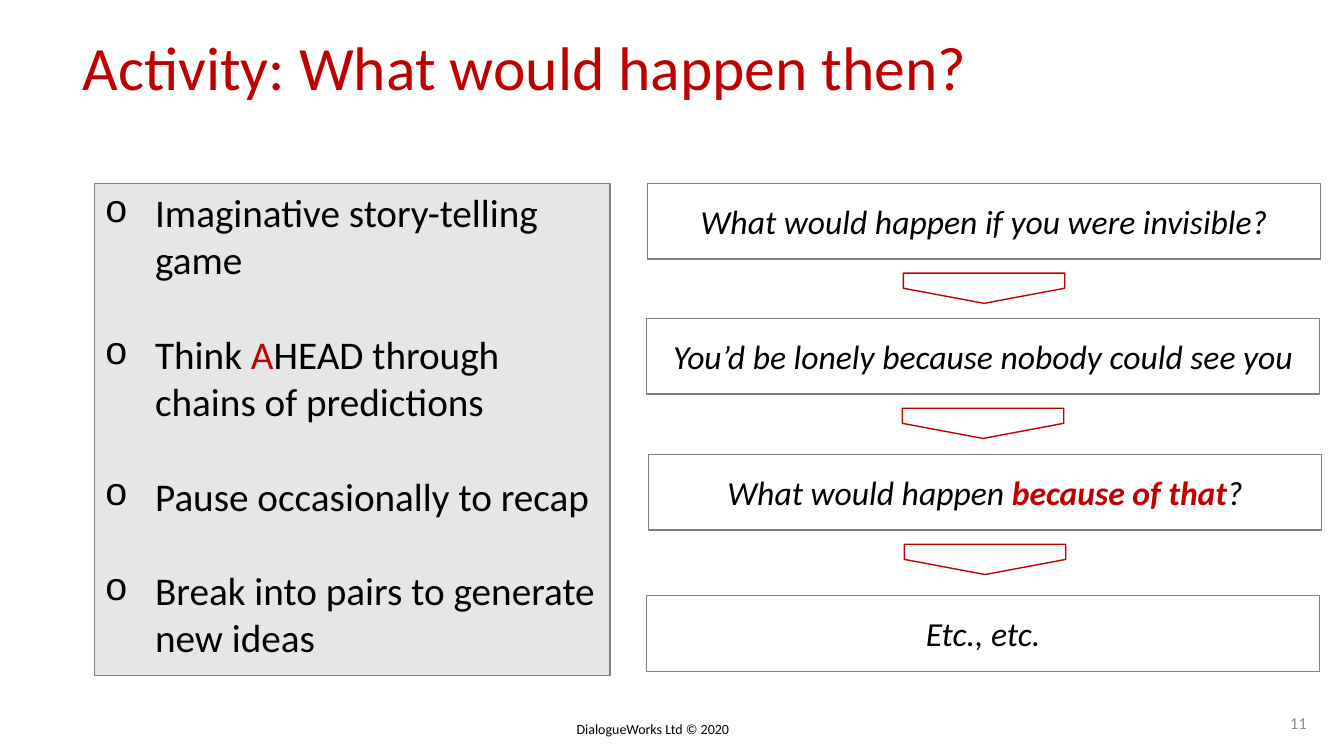
from dataclasses import dataclass
from typing import Optional

from lxml.etree import SubElement
from pptx import Presentation
from pptx.dml.color import RGBColor
from pptx.enum.shapes import MSO_SHAPE as Shape
from pptx.enum.text import MSO_ANCHOR as Anchor, PP_ALIGN as Align
from pptx.oxml.ns import qn
from pptx.util import Inches, Pt


@dataclass(frozen=True)
class Theme:
    font: str = "Calibri"
    bullet_font: str = "Courier New"
    black: str = "000000"
    red: str = "C00000"
    outline: str = "808080"
    panel: str = "E7E6E6"
    page_grey: str = "8C8C8C"
    title_size: int = 44
    bullet_size: int = 28
    step_size: int = 24
    page_size: int = 12
    footer_size: int = 10


@dataclass(frozen=True)
class Run:
    text: str
    red: bool = False
    bold: bool = False


@dataclass(frozen=True)
class Step:
    left: float
    top: float
    runs: tuple[Run, ...]
    arrow: bool = True


THEME = Theme()
STEP_WIDTH, STEP_HEIGHT = 6.68, 0.75
ARROW_LENGTH, ARROW_SPAN = 0.3, 1.6
ARROW_GAP = 0.14

BULLETS = (
    (Run("Imaginative story-telling game"),),
    (Run("Think "), Run("A", red=True), Run("HEAD through chains of predictions")),
    (Run("Pause occasionally to recap"),),
    (Run("Break into pairs to generate new ideas"),),
)
STEPS = (
    Step(6.42, 1.82, (Run("What would happen if you were invisible?"),)),
    Step(6.41, 3.16, (Run("You’d be lonely because nobody could see you"),)),
    Step(6.43, 4.51, (Run("What would happen "),
                      Run("because of that", red=True, bold=True), Run("?"))),
    Step(6.41, 5.91, (Run("Etc., etc."),), arrow=False),
)


def write_text(shape, paragraphs, *, size: int, color: str = THEME.black,
               italic: bool = False, align=Align.LEFT, anchor=Anchor.TOP,
               wrap: bool = True, bullet: bool = False, gap: float = 0,
               line_spacing: Optional[float] = None) -> None:
    """Fill a shape with paragraphs, each a sequence of runs."""
    frame = shape.text_frame
    frame.word_wrap = wrap
    frame.vertical_anchor = anchor
    for index, runs in enumerate(paragraphs):
        paragraph = frame.paragraphs[0] if index == 0 else frame.add_paragraph()
        paragraph.alignment = align
        if line_spacing:
            paragraph.line_spacing = line_spacing
        if index and gap:
            paragraph.space_before = Pt(gap)
        if bullet:
            add_bullet(paragraph)
        for part in runs:
            run = paragraph.add_run()
            run.text = part.text
            font = run.font
            font.name, font.size = THEME.font, Pt(size)
            font.bold, font.italic = part.bold, italic
            font.color.rgb = RGBColor.from_string(THEME.red if part.red else color)


def add_bullet(paragraph) -> None:
    """Give a paragraph a hanging round bullet."""
    properties = paragraph._p.get_or_add_pPr()
    properties.set("marL", str(Inches(0.5)))
    properties.set("indent", str(Inches(-0.5)))
    SubElement(properties, qn("a:buFont")).set("typeface", THEME.bullet_font)
    SubElement(properties, qn("a:buChar")).set("char", "o")


def add_box(slide, left: float, top: float, width: float, height: float, *,
            kind=Shape.RECTANGLE, line: str = THEME.outline,
            fill: Optional[str] = None):
    """Draw an outlined preset shape."""
    shape = slide.shapes.add_shape(
        kind, Inches(left), Inches(top), Inches(width), Inches(height))
    shape.shadow.inherit = False
    if fill:
        shape.fill.solid()
        shape.fill.fore_color.rgb = RGBColor.from_string(fill)
    else:
        shape.fill.background()
    shape.line.color.rgb = RGBColor.from_string(line)
    shape.line.width = Pt(1)
    return shape


def add_label(slide, left: float, top: float, width: float, height: float,
              text: str, **text_format) -> None:
    """Add a one-paragraph text box."""
    label = slide.shapes.add_textbox(
        Inches(left), Inches(top), Inches(width), Inches(height))
    write_text(label, [(Run(text),)], **text_format)


def add_step(slide, step: Step) -> None:
    """Draw a step of the story and the arrow below it."""
    box = add_box(slide, step.left, step.top, STEP_WIDTH, STEP_HEIGHT)
    write_text(box, [step.runs], size=THEME.step_size, italic=True,
               align=Align.CENTER, anchor=Anchor.MIDDLE)
    if step.arrow:
        center_x = step.left + STEP_WIDTH / 2
        center_y = step.top + STEP_HEIGHT + ARROW_GAP + ARROW_LENGTH / 2
        arrow = add_box(slide, center_x - ARROW_LENGTH / 2, center_y - ARROW_SPAN / 2,
                        ARROW_LENGTH, ARROW_SPAN, kind=Shape.PENTAGON, line=THEME.red)
        arrow.rotation = 90


def main() -> None:
    presentation = Presentation()
    presentation.slide_width = Inches(13.33)
    presentation.slide_height = Inches(7.5)
    slide = presentation.slides.add_slide(presentation.slide_layouts[6])

    # Footer and page number
    add_label(slide, 5.62, 7.1, 1.75, 0.27, "DialogueWorks Ltd © 2020",
              size=THEME.footer_size, wrap=False)
    add_label(slide, 12.55, 6.97, 0.51, 0.4, "11", size=THEME.page_size,
              color=THEME.page_grey, align=Align.RIGHT, anchor=Anchor.MIDDLE)

    # Title
    add_label(slide, 0.72, 0.32, 9.79, 1.06, "Activity: What would happen then?",
              size=THEME.title_size, color=THEME.red, line_spacing=0.9)

    # Rules of the game
    panel = add_box(slide, 0.94, 1.82, 5.11, 4.88, fill=THEME.panel)
    write_text(panel, BULLETS, size=THEME.bullet_size, bullet=True, gap=34)

    # Chain of predictions
    for step in STEPS:
        add_step(slide, step)

    presentation.save("out.pptx")


if __name__ == "__main__":
    main()
